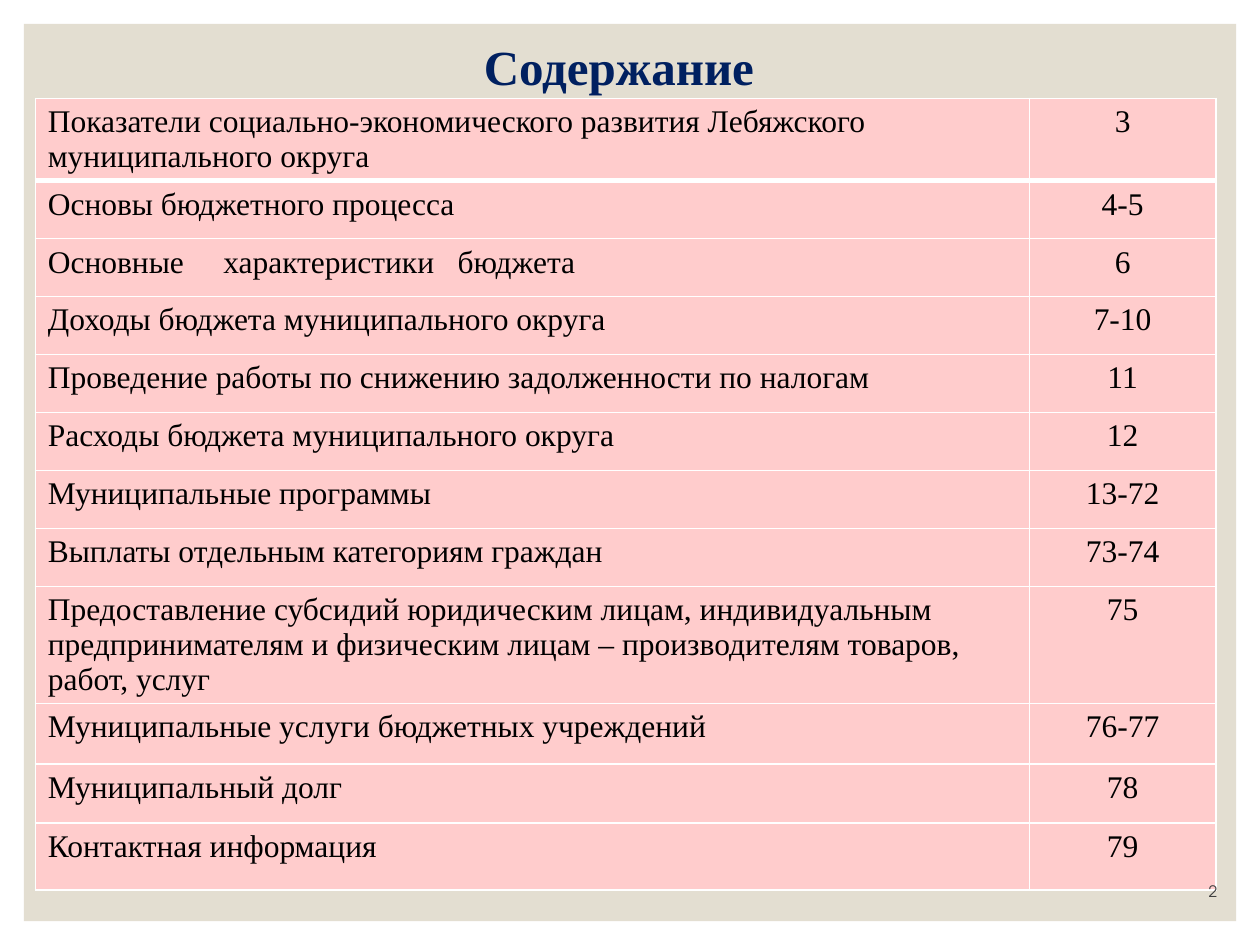
"""Build the table-of-contents slide of a municipal budget presentation."""
from typing import NamedTuple

from lxml import etree
from pptx import Presentation
from pptx.dml.color import RGBColor
from pptx.enum.shapes import MSO_SHAPE
from pptx.enum.text import MSO_ANCHOR, PP_ALIGN
from pptx.oxml.ns import qn
from pptx.util import Inches, Pt

RECT = MSO_SHAPE.RECTANGLE
MIDDLE, BOTTOM = MSO_ANCHOR.MIDDLE, MSO_ANCHOR.BOTTOM
LEFT, CENTER, RIGHT = PP_ALIGN.LEFT, PP_ALIGN.CENTER, PP_ALIGN.RIGHT

WIDTH, HEIGHT = 10, 7.5
MARGIN = 0.19
COLUMNS = (7.89, 1.48)
SERIF, SANS = "Times New Roman", "TeX Gyre Adventor"
WHITE, SAND, PINK = "FFFFFF", "E3DED1", "FFCCCC"
NAVY, BLACK, GREY = "002060", "000000", "404040"
THIN, THICK = 1, 3


class Entry(NamedTuple):
    """One line of the contents: topic, pages and row height in inches."""
    topic: str
    pages: str
    height: float = 0.46


ENTRIES = (
    Entry("Показатели социально-экономического развития Лебяжского муниципального округа", "3"),
    Entry("Основы бюджетного процесса", "4-5"),
    Entry("Основные     характеристики   бюджета", "6"),
    Entry("Доходы бюджета муниципального округа", "7-10"),
    Entry("Проведение работы по снижению задолженности по налогам", "11"),
    Entry("Расходы бюджета муниципального округа", "12"),
    Entry("Муниципальные программы", "13-72"),
    Entry("Выплаты отдельным категориям граждан", "73-74"),
    Entry("Предоставление субсидий юридическим лицам, индивидуальным предпринимателям "
          "и физическим лицам – производителям товаров, работ, услуг", "75", 0.79),
    Entry("Муниципальные услуги бюджетных учреждений", "76-77", 0.48),
    Entry("Муниципальный долг", "78", 0.47),
    Entry("Контактная информация", "79", 0.53),
)


def rgb(color: str) -> RGBColor:
    """Turn a hex string into a colour."""
    return RGBColor.from_string(color)


def set_text(tf, text: str, size: float, color: str, align, font=SERIF, bold=False) -> None:
    """Write one formatted paragraph into a text frame."""
    tf.text = text
    p = tf.paragraphs[0]
    p.alignment = align
    f = p.runs[0].font
    f.name, f.size, f.bold = font, Pt(size), bold
    f.color.rgb = rgb(color)


def set_borders(cell, top: float, bottom: float) -> None:
    """Draw white borders around a table cell."""
    props = cell._tc.get_or_add_tcPr()
    for side, width in (("L", THIN), ("R", THIN), ("T", top), ("B", bottom)):
        line = etree.SubElement(props, qn(f"a:ln{side}"), w=str(Pt(width)))
        fill = etree.SubElement(line, qn("a:solidFill"))
        etree.SubElement(fill, qn("a:srgbClr"), val=WHITE)


def add_title(s) -> None:
    """Place and format the slide title."""
    title = s.shapes.title
    title.left, title.top = Inches(0.46), Inches(0.25)
    title.width, title.height = Inches(9), Inches(0.6)
    tf = title.text_frame
    tf.vertical_anchor = MIDDLE
    set_text(tf, "Содержание ", 28, NAVY, CENTER, bold=True)
    tf.paragraphs[0].line_spacing = 0.9


def add_panel(s) -> None:
    """Put the sand panel behind the title."""
    panel = s.shapes.add_shape(RECT, Inches(MARGIN), Inches(MARGIN),
                               Inches(WIDTH - 2 * MARGIN), Inches(HEIGHT - 2 * MARGIN))
    panel.shadow.inherit = False
    panel.fill.solid()
    panel.fill.fore_color.rgb = rgb(SAND)
    panel.line.fill.background()
    s.shapes.title.element.addprevious(panel.element)


def add_contents(s) -> None:
    """Add the table of topics and page numbers."""
    total = sum(entry.height for entry in ENTRIES)
    table = s.shapes.add_table(len(ENTRIES), len(COLUMNS), Inches(0.28), Inches(0.78),
                               Inches(sum(COLUMNS)), Inches(total)).table
    for column, width in zip(table.columns, COLUMNS):
        column.width = Inches(width)
    for i, entry in enumerate(ENTRIES):
        table.rows[i].height = Inches(entry.height)
        for j, (text, align) in enumerate(((entry.topic, LEFT), (entry.pages, CENTER))):
            cell = table.cell(i, j)
            set_text(cell.text_frame, text, 18, BLACK, align)
            set_borders(cell, THICK if i == 1 else THIN, THICK if i == 0 else THIN)
            cell.fill.solid()
            cell.fill.fore_color.rgb = rgb(PINK)


def add_page_number(s) -> None:
    """Add the page number in the lower right corner."""
    tf = s.shapes.add_textbox(Inches(8.56), Inches(6.9), Inches(1.2), Inches(0.3)).text_frame
    tf.word_wrap = True
    tf.vertical_anchor = BOTTOM
    set_text(tf, "2", 9, GREY, RIGHT, font=SANS)


def main() -> None:
    """Build and save the presentation."""
    prs = Presentation()
    prs.slide_width, prs.slide_height = Inches(WIDTH), Inches(HEIGHT)
    s = prs.slides.add_slide(prs.slide_layouts.get_by_name("Title Only"))
    add_title(s)
    add_panel(s)
    add_contents(s)
    add_page_number(s)
    prs.save("out.pptx")


if __name__ == "__main__":
    main()
